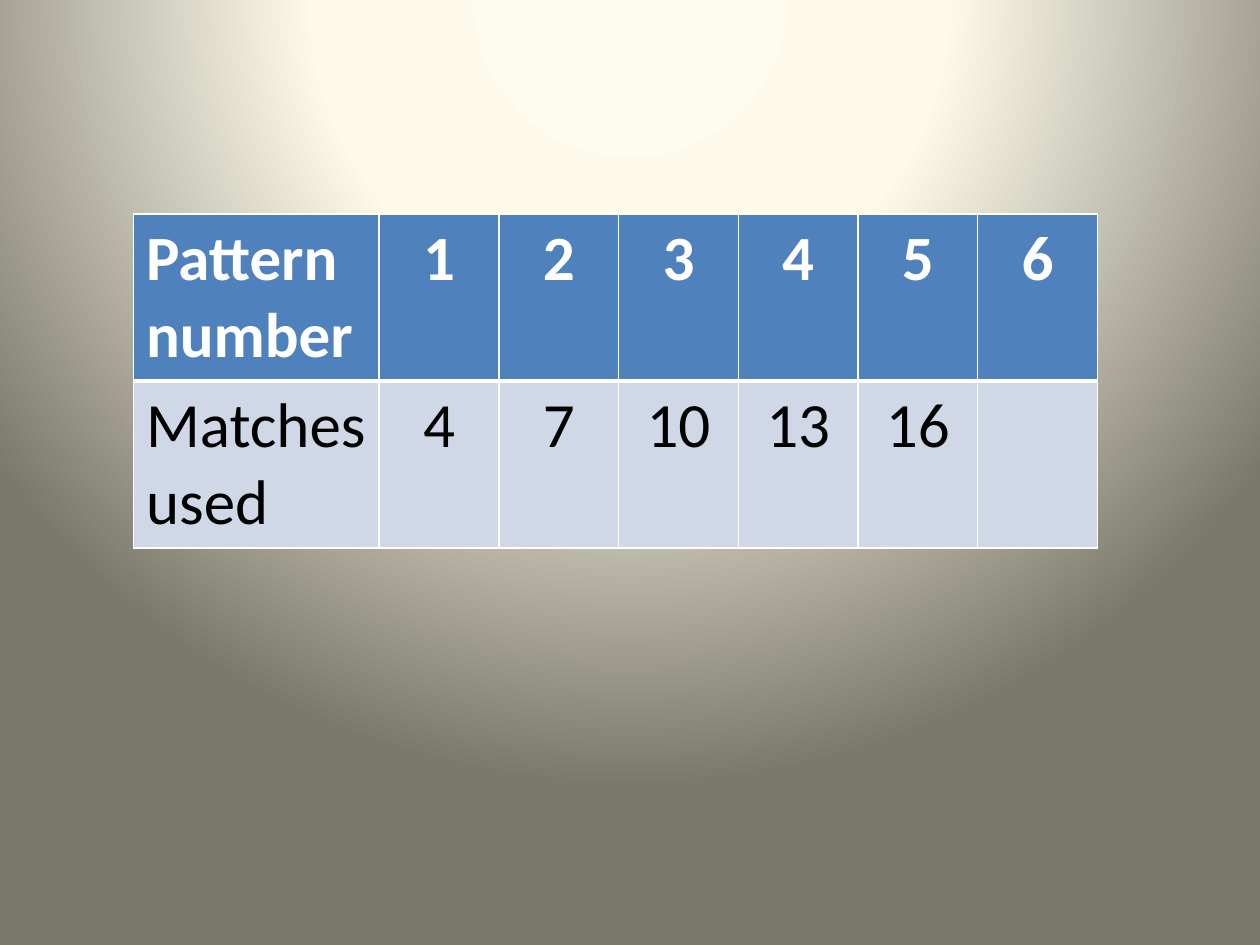
from dataclasses import dataclass

from lxml.etree import SubElement
from pptx import Presentation
from pptx.dml.color import RGBColor
from pptx.enum.text import PP_ALIGN
from pptx.oxml import parse_xml
from pptx.oxml.ns import nsdecls, qn
from pptx.util import Inches, Pt


@dataclass(frozen=True)
class Theme:
    font: str = "Calibri"
    text_size: int = 36
    header_fill: str = "4F81BD"
    header_text: str = "FFFFFF"
    body_fill: str = "D0D8E8"
    body_text: str = "000000"
    border: str = "FFFFFF"
    thin_border: int = 1
    thick_border: int = 3
    background: tuple = ((0, "FEFCEE"), (40, "FDFAEA"), (100, "7B796B"))


THEME = Theme()
ROWS = (
    ("Pattern  number", "1", "2", "3", "4", "5", "6"),
    ("Matches used", "4", "7", "10", "13", "16", ""),
)


def set_radial_background(slide):
    """Fill the background with a circular gradient centred above the slide."""
    stops = "".join(
        f'<a:gs pos="{position * 1000}"><a:srgbClr val="{color}"/></a:gs>'
        for position, color in THEME.background
    )
    background = parse_xml(
        f'<p:bg {nsdecls("p", "a")}><p:bgPr><a:gradFill rotWithShape="1">'
        f'<a:gsLst>{stops}</a:gsLst><a:path path="circle">'
        '<a:fillToRect l="50000" t="-80000" r="50000" b="180000"/>'
        "</a:path></a:gradFill><a:effectLst/></p:bgPr></p:bg>"
    )
    slide.element.cSld.insert(0, background)


def set_borders(cell, is_header):
    properties = cell._tc.get_or_add_tcPr()
    thick_side = "lnB" if is_header else "lnT"
    for side in ("lnL", "lnR", "lnT", "lnB"):
        width = THEME.thick_border if side == thick_side else THEME.thin_border
        line = SubElement(properties, qn(f"a:{side}"), w=str(Pt(width)))
        fill = SubElement(line, qn("a:solidFill"))
        SubElement(fill, qn("a:srgbClr"), val=THEME.border)


def write_cell(cell, text, is_header, is_label):
    set_borders(cell, is_header)
    cell.fill.solid()
    cell.fill.fore_color.rgb = RGBColor.from_string(
        THEME.header_fill if is_header else THEME.body_fill
    )
    if not text:
        return
    paragraph = cell.text_frame.paragraphs[0]
    paragraph.alignment = PP_ALIGN.LEFT if is_label else PP_ALIGN.CENTER
    run = paragraph.add_run()
    run.text = text
    run.font.name = THEME.font
    run.font.size = Pt(THEME.text_size)
    run.font.bold = is_header
    run.font.color.rgb = RGBColor.from_string(
        THEME.header_text if is_header else THEME.body_text
    )


def add_pattern_table(slide):
    frame = slide.shapes.add_table(
        len(ROWS), len(ROWS[0]), Inches(1.06), Inches(1.7), Inches(7.67), Inches(2.6)
    )
    table = frame.table
    for index, column in enumerate(table.columns):
        column.width = Inches(0.95 if index else 1.95)
    for row_index, texts in enumerate(ROWS):
        for column_index, text in enumerate(texts):
            cell = table.cell(row_index, column_index)
            write_cell(cell, text, row_index == 0, column_index == 0)


def main():
    presentation = Presentation()
    presentation.slide_width = Inches(10)
    presentation.slide_height = Inches(7.5)
    slide = presentation.slides.add_slide(presentation.slide_layouts[6])
    set_radial_background(slide)
    add_pattern_table(slide)
    presentation.save("out.pptx")


if __name__ == "__main__":
    main()
